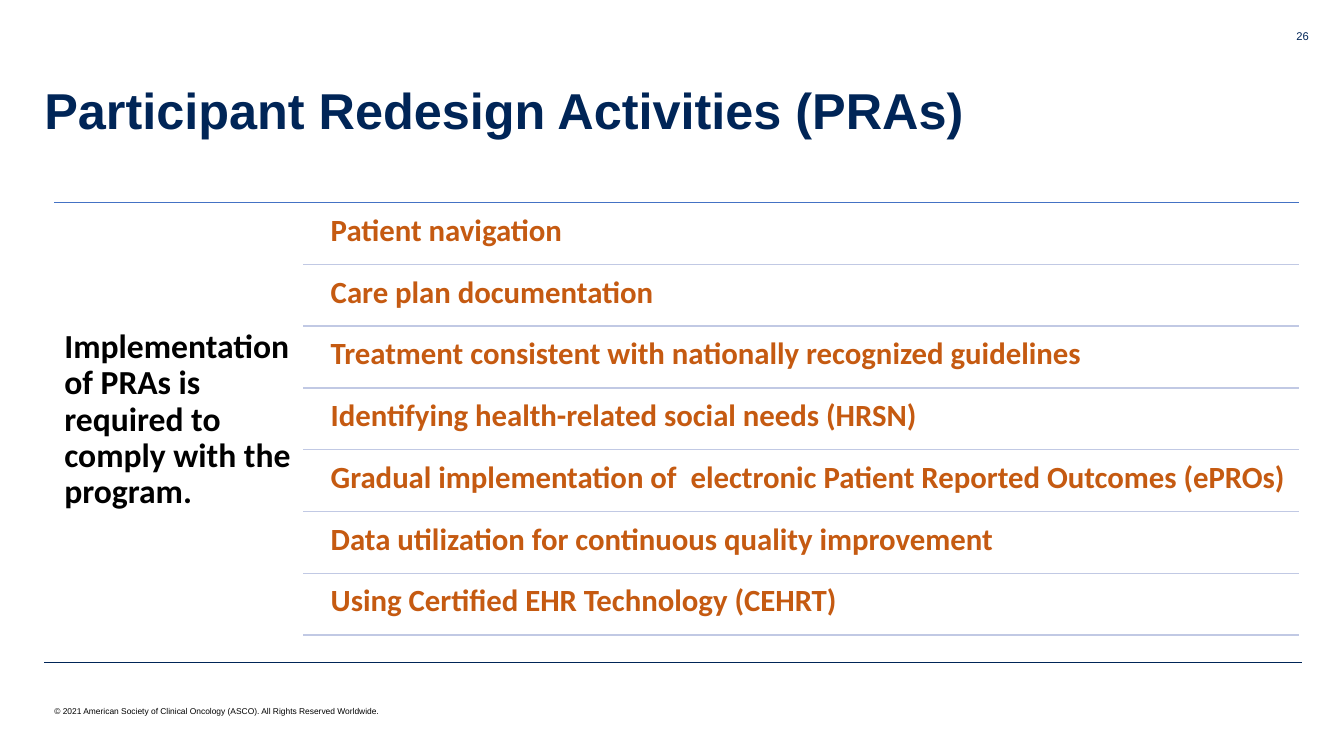
from lxml.etree import SubElement
from pptx import Presentation
from pptx.dml.color import RGBColor
from pptx.enum.shapes import MSO_CONNECTOR
from pptx.enum.text import MSO_ANCHOR, MSO_AUTO_SIZE, PP_ALIGN
from pptx.oxml.ns import qn
from pptx.util import Inches, Pt

NAVY = RGBColor(0x00, 0x25, 0x57)
BLACK = RGBColor(0x00, 0x00, 0x00)
BLUE = RGBColor(0x44, 0x72, 0xC4)
PALE_BLUE = RGBColor(0xC1, 0xC9, 0xE4)
ORANGE = RGBColor(0xC5, 0x5A, 0x11)

ACTIVITIES = [
    "Patient navigation",
    "Care plan documentation",
    "Treatment consistent with nationally recognized guidelines",
    "Identifying health-related social needs (HRSN)",
    "Gradual implementation of  electronic Patient Reported Outcomes (ePROs)",
    "Data utilization for continuous quality improvement",
    "Using Certified EHR Technology (CEHRT)",
]
LIST_TOP, LIST_BOTTOM = 2.01, 6.3
LIST_LEFT, DIVIDER_LEFT, LIST_RIGHT = 0.54, 3.01, 12.88
ROW_HEIGHT = (LIST_BOTTOM - LIST_TOP) / len(ACTIVITIES)


class SlideBuilder:
    """Draws styled titles, text boxes and rules on one slide."""

    def __init__(self, deck):
        self.page = deck.slides.add_slide(deck.slide_layouts[5])

    def fill_text(self, box, text, size, color, font="Arial", bold=False,
                  anchor=MSO_ANCHOR.TOP, align=PP_ALIGN.LEFT, spacing=1.0):
        frame = box.text_frame
        frame.word_wrap = True
        frame.auto_size = MSO_AUTO_SIZE.NONE
        frame.vertical_anchor = anchor
        para = frame.paragraphs[0]
        para.text = text
        para.alignment = align
        para.line_spacing = spacing
        para.space_before = Pt(0)
        para.font.name = font
        para.font.size = Pt(size)
        para.font.bold = bold
        para.font.color.rgb = color

    def title(self, text, left, top, width, height):
        box = self.page.shapes.title
        box.left, box.top = Inches(left), Inches(top)
        box.width, box.height = Inches(width), Inches(height)
        self.fill_text(box, text, 36, NAVY, bold=True,
                       anchor=MSO_ANCHOR.MIDDLE, spacing=0.9)

    def text(self, text, left, top, width, height, size, color, inset=None, **style):
        box = self.page.shapes.add_textbox(
            Inches(left), Inches(top), Inches(width), Inches(height))
        if inset is not None:
            frame = box.text_frame
            frame.margin_left = frame.margin_right = Inches(inset)
            frame.margin_top = frame.margin_bottom = Inches(inset)
        self.fill_text(box, text, size, color, **style)

    def rule(self, left, right, top, color, weight=1):
        line = self.page.shapes.add_connector(
            MSO_CONNECTOR.STRAIGHT, Inches(left), Inches(top), Inches(right), Inches(top))
        line.line.color.rgb = color
        line.line.width = Pt(weight)
        SubElement(line._element.spPr, qn("a:effectLst"))


def main():
    deck = Presentation()
    deck.slide_width, deck.slide_height = Inches(13.33), Inches(7.5)
    slide = SlideBuilder(deck)

    slide.rule(0.44, 12.91, 6.57, NAVY, 0.25)
    slide.text("© 2021 American Society of Clinical Oncology (ASCO). All Rights Reserved Worldwide.",
               0.44, 6.86, 3.62, 0.4, 6, BLACK, anchor=MSO_ANCHOR.MIDDLE)
    slide.text("26", 12.22, 0.24, 0.86, 0.3, 8, NAVY, align=PP_ALIGN.RIGHT)
    slide.title("Participant Redesign Activities (PRAs)", 0.34, 0.4, 12.07, 1.45)

    slide.rule(LIST_LEFT, LIST_RIGHT, LIST_TOP, BLUE)
    slide.text("Implementation of PRAs is required to comply with the program.",
               LIST_LEFT, LIST_TOP, DIVIDER_LEFT - LIST_LEFT, 4.32, 24, BLACK,
               inset=0.1, font="Calibri", bold=True, anchor=MSO_ANCHOR.MIDDLE, spacing=0.9)
    for row, activity in enumerate(ACTIVITIES):
        top = LIST_TOP + row * ROW_HEIGHT
        slide.text(activity, 3.19, top + 0.03, 9.69, 0.58, 22, ORANGE,
                   inset=0.09, font="Calibri", bold=True, spacing=0.9)
        slide.rule(DIVIDER_LEFT, LIST_RIGHT, top + ROW_HEIGHT, PALE_BLUE)

    deck.save("out.pptx")


if __name__ == "__main__":
    main()
